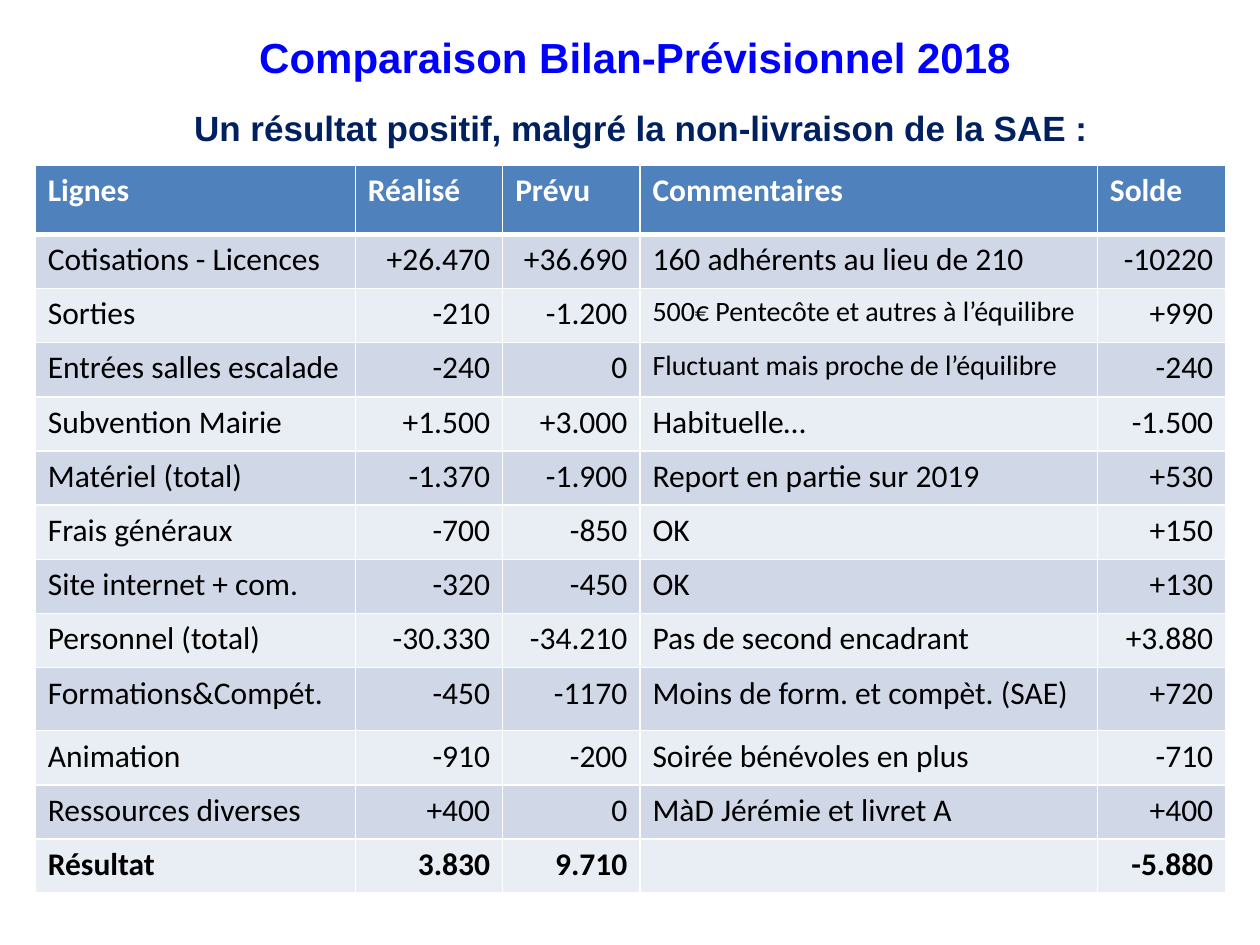
from lxml.etree import SubElement
from pptx import Presentation
from pptx.dml.color import RGBColor
from pptx.enum.text import MSO_ANCHOR as Anchor, PP_ALIGN as Align
from pptx.oxml.ns import qn
from pptx.util import Inches, Pt

COLORS = {
    "title": "0000FF",
    "subtitle": "002060",
    "header": "4F81BD",
    "odd": "D0D8E8",
    "even": "E9EDF4",
    "white": "FFFFFF",
    "black": "000000",
}

COLUMN_WIDTHS = [2.54, 1.17, 1.09, 3.63, 1.02]
HEADER_HEIGHT, ROW_HEIGHT, TRAINING_HEIGHT = 0.55, 0.43, 0.5
NUMBER_COLUMNS = {1, 2, 4}
SMALL_COMMENT_ROWS = {2, 3}
TRAINING_ROW = 9

ROWS = [
    ("Lignes", "Réalisé", "Prévu", "Commentaires", "Solde"),
    ("Cotisations - Licences", "+26.470", "+36.690", "160 adhérents au lieu de 210", "-10220"),
    ("Sorties", "-210", "-1.200", "500€ Pentecôte et autres à l’équilibre", "+990"),
    ("Entrées salles escalade", "-240", "0", "Fluctuant mais proche de l’équilibre", "-240"),
    ("Subvention Mairie", "+1.500", "+3.000", "Habituelle…", "-1.500"),
    ("Matériel (total)", "-1.370", "-1.900", "Report en partie sur 2019", "+530"),
    ("Frais généraux", "-700", "-850", "OK", "+150"),
    ("Site internet + com.", "-320", "-450", "OK", "+130"),
    ("Personnel (total)", "-30.330", "-34.210", "Pas de second encadrant", "+3.880"),
    ("Formations&Compét.", "-450", "-1170", "Moins de form. et compèt. (SAE)", "+720"),
    ("Animation", "-910", "-200", "Soirée bénévoles en plus", "-710"),
    ("Ressources diverses", "+400", "0", "MàD Jérémie et livret A", "+400"),
    ("Résultat", "3.830", "9.710", "", "-5.880"),
]


def write_text(frame, text, *, size, color, font="Calibri", bold=False,
               align=Align.LEFT, line_spacing=None):
    paragraph = frame.paragraphs[0]
    paragraph.alignment = align
    paragraph.line_spacing = line_spacing
    if not text:
        return
    run = paragraph.add_run()
    run.text = text
    run.font.name = font
    run.font.size = Pt(size)
    run.font.bold = bold
    run.font.color.rgb = RGBColor.from_string(COLORS[color])


def prepare_frame(shape, anchor):
    frame = shape.text_frame
    frame.word_wrap = True
    frame.vertical_anchor = anchor
    frame.margin_left = frame.margin_right = 0
    frame.margin_top = frame.margin_bottom = 0
    return frame


def add_title(slide, left, top, width, height):
    title = slide.shapes.title
    title.left, title.top = Inches(left), Inches(top)
    title.width, title.height = Inches(width), Inches(height)
    write_text(prepare_frame(title, Anchor.MIDDLE), "Comparaison Bilan-Prévisionnel 2018",
               size=24, color="title", font="Arial", bold=True, align=Align.CENTER)


def add_subtitle(slide, left, top, width, height):
    box = slide.shapes.add_textbox(Inches(left), Inches(top), Inches(width), Inches(height))
    write_text(prepare_frame(box, Anchor.TOP),
               "Un résultat positif, malgré la non-livraison de la SAE :",
               size=20, color="subtitle", font="Arial", bold=True, line_spacing=1.5)


def set_borders(cell, widths):
    properties = cell._tc.get_or_add_tcPr()
    for side, width in widths.items():
        line = SubElement(properties, qn(f"a:ln{side}"), w=str(Pt(width)))
        fill = SubElement(line, qn("a:solidFill"))
        SubElement(fill, qn("a:srgbClr"), val=COLORS["white"])


def format_cell(cell, text, row, column):
    is_header = row == 0
    is_total = row == len(ROWS) - 1
    is_small = column == 3 and row in SMALL_COMMENT_ROWS
    is_number = column in NUMBER_COLUMNS and not is_header
    set_borders(cell, {"L": 1, "R": 1, "T": 3 if row == 1 else 1, "B": 3 if is_header else 1})
    band = "header" if is_header else "odd" if row % 2 else "even"
    cell.fill.solid()
    cell.fill.fore_color.rgb = RGBColor.from_string(COLORS[band])
    write_text(cell.text_frame, text, size=16 if is_small else 18,
               color="white" if is_header else "black", bold=is_header or is_total,
               align=Align.RIGHT if is_number else Align.LEFT)


def add_budget_table(slide, left, top, width, height):
    table = slide.shapes.add_table(len(ROWS), len(COLUMN_WIDTHS), Inches(left), Inches(top),
                                   Inches(width), Inches(height)).table
    for column, column_width in zip(table.columns, COLUMN_WIDTHS):
        column.width = Inches(column_width)
    special_heights = {0: HEADER_HEIGHT, TRAINING_ROW: TRAINING_HEIGHT}
    for row, values in enumerate(ROWS):
        table.rows[row].height = Inches(special_heights.get(row, ROW_HEIGHT))
        for column, text in enumerate(values):
            format_cell(table.cell(row, column), text, row, column)


def main():
    presentation = Presentation()
    presentation.slide_width, presentation.slide_height = Inches(10), Inches(7.5)
    slide = presentation.slides.add_slide(presentation.slide_layouts.get_by_name("Title Only"))
    add_title(slide, 1.22, 0.22, 7.64, 0.46)
    add_budget_table(slide, 0.28, 1.31, 9.45, 5.78)
    add_subtitle(slide, 1.54, 0.68, 7.17, 0.55)
    presentation.save("out.pptx")


if __name__ == "__main__":
    main()
